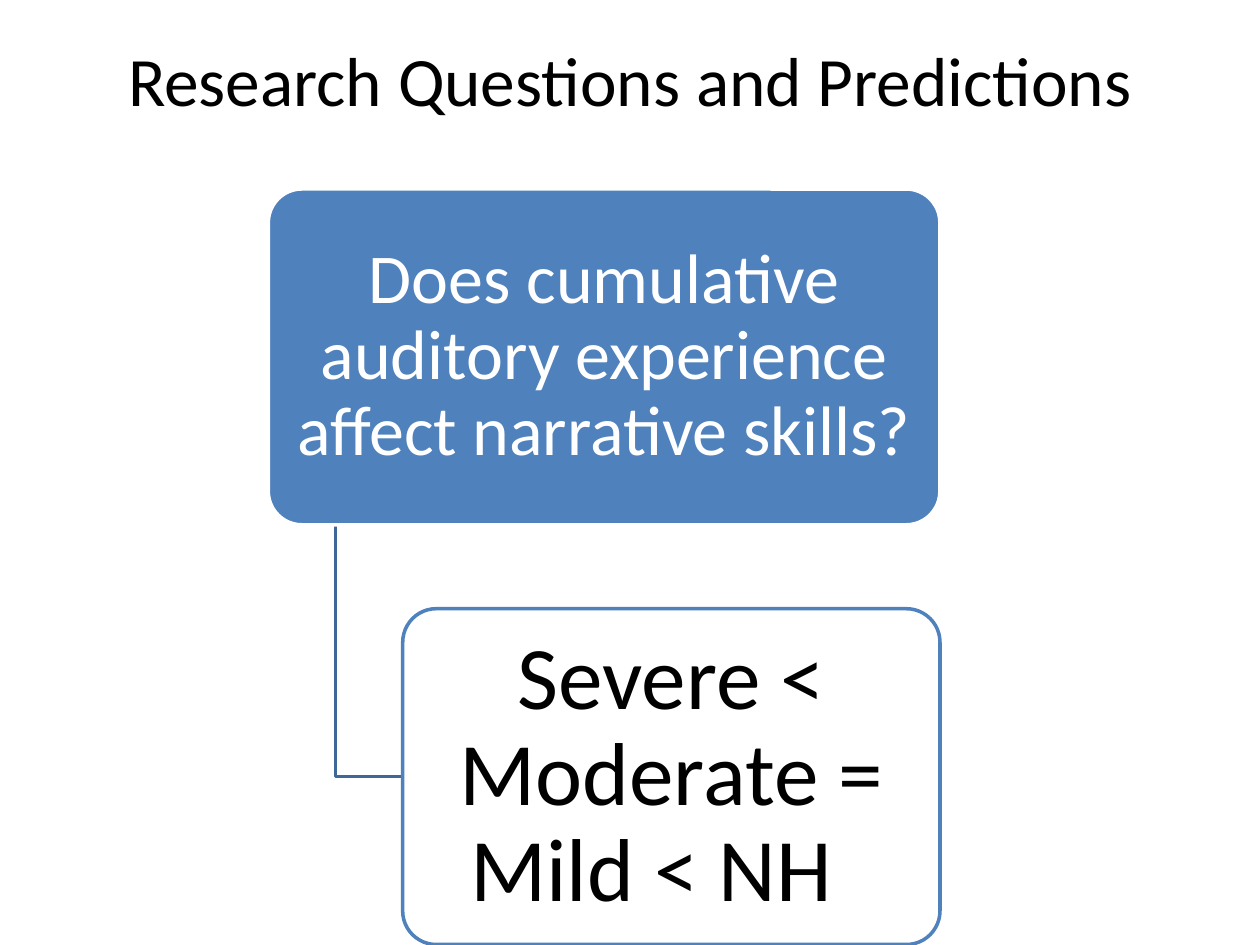
"""Build the slide of a research question and its prediction."""
import pptx
import pptx.util
import pptx.dml.color
import pptx.enum.shapes
import pptx.enum.text

Inches, Pt = pptx.util.Inches, pptx.util.Pt
SHAPES = pptx.enum.shapes.MSO_SHAPE

TITLE = "Research Questions and Predictions"
QUESTION = "Does cumulative auditory experience affect narrative skills?"
PREDICTION = "Severe < Moderate = Mild < NH  "

THEME = {
    "font": "Calibri", "line": 2, "corner": 0.1,
    "white": "FFFFFF", "black": "000000", "blue": "4F81BD", "link": "3F6797",
    "title": 39.6, "question": 40, "prediction": 51,
}
WIDTH, HEIGHT = 10, 7.5
LEFT, TOP, BOX_WIDTH = 2.13, 1.5, 5.33
BOX_HEIGHT = BOX_WIDTH / 2
STEP = BOX_HEIGHT * 1.25
INDENT = BOX_WIDTH / 10
CHILD_LEFT, CHILD_WIDTH = LEFT + 2 * INDENT, BOX_WIDTH * 0.8

BOXES = [
    {"text": QUESTION, "area": (LEFT, TOP, BOX_WIDTH, BOX_HEIGHT), "size": "question",
     "fill": "blue", "line": "white", "ink": "white", "insets": (0.08, 0.06)},
    {"text": PREDICTION, "area": (CHILD_LEFT, TOP + STEP, CHILD_WIDTH, BOX_HEIGHT),
     "size": "prediction", "fill": "white", "line": "blue", "ink": "black",
     "insets": (0.11, 0.07)},
]


def color(name):
    return pptx.dml.color.RGBColor.from_string(THEME[name])


def apply(target, values):
    for name, value in values.items():
        setattr(target, name, value)


def outline(shape, name):
    shape.shadow.inherit = False
    shape.line.color.rgb = color(name)
    shape.line.width = Pt(THEME["line"])


def write(shape, text, size, ink, insets, spacing):
    across, down = map(Inches, insets)
    apply(shape.text_frame, {
        "word_wrap": True, "vertical_anchor": pptx.enum.text.MSO_ANCHOR.MIDDLE,
        "margin_left": across, "margin_right": across,
        "margin_top": down, "margin_bottom": down})
    para = shape.text_frame.paragraphs[0]
    apply(para, {"alignment": pptx.enum.text.PP_ALIGN.CENTER, "line_spacing": spacing})
    span = para.add_run()
    span.text = text
    apply(span.font, {"name": THEME["font"], "size": Pt(THEME[size])})
    span.font.color.rgb = color(ink)


def add_box(page, text, area, size, fill, line, ink, insets):
    box = page.shapes.add_shape(SHAPES.ROUNDED_RECTANGLE, *map(Inches, area))
    box.adjustments[0] = THEME["corner"]
    box.fill.solid()
    box.fill.fore_color.rgb = color(fill)
    outline(box, line)
    write(box, text, size, ink, insets, 0.9)


def add_elbow(page):
    left, right = Inches(LEFT + INDENT), Inches(CHILD_LEFT)
    top, middle = Inches(TOP + BOX_HEIGHT), Inches(TOP + STEP + BOX_HEIGHT / 2)
    builder = page.shapes.build_freeform(left, top)
    builder.add_line_segments([(left, middle), (right, middle)], close=False)
    elbow = builder.convert_to_shape()
    elbow.fill.background()
    outline(elbow, "link")


def main():
    deck = pptx.Presentation()
    apply(deck, {"slide_width": Inches(WIDTH), "slide_height": Inches(HEIGHT)})
    page = deck.slides.add_slide(deck.slide_layouts[6])
    title = page.shapes.add_textbox(*map(Inches, (WIDTH * 0.05, 0, WIDTH * 0.9, HEIGHT / 6)))
    write(title, TITLE, "title", "black", (0.1, 0.05), 1.0)
    add_elbow(page)
    for box in BOXES:
        add_box(page, **box)
    deck.save("out.pptx")


if __name__ == "__main__":
    main()
